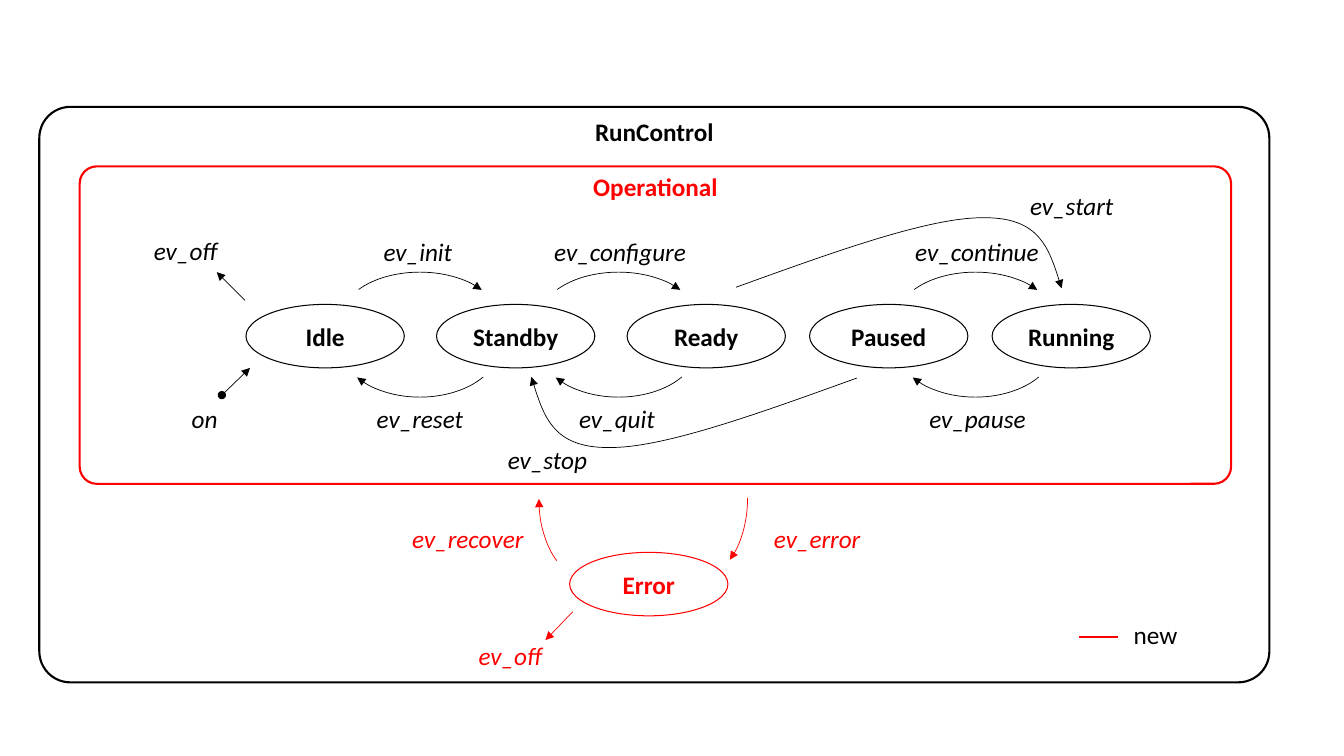
from lxml import etree
from pptx import Presentation
from pptx.dml.color import RGBColor
from pptx.enum import shapes, text
from pptx.oxml.ns import qn
from pptx.util import Inches, Pt

BLACK = RGBColor(0x00, 0x00, 0x00)
RED = RGBColor(0xFF, 0x00, 0x00)
FONT = "Calibri"

STATE_WIDTH, STATE_HEIGHT = 1.57, 0.63
STATE_TOP = 3.02
STATES = [("Idle", 2.44), ("Standby", 4.33), ("Ready", 6.22), ("Paused", 8.03), ("Running", 9.84)]

# Arc left, forward event with its left and width, backward event with the same
TRANSITION_PAIRS = [
    (3.38, ("ev_init", 3.7, 0.89), ("ev_reset", 3.63, 1.07)),
    (5.35, ("ev_configure", 5.39, 1.52), ("ev_quit", 5.64, 0.96)),
    (8.89, ("ev_continue", 8.97, 1.44), ("ev_pause", 9.11, 1.17)),
]
LABELS = [
    ("ev_start", 10.11, 1.84, 1.04, BLACK),
    ("ev_stop", 4.93, 4.36, 1.0, BLACK),
    ("on", 1.8, 3.95, 0.46, BLACK),
    ("ev_off", 1.42, 2.29, 0.84, BLACK),
    ("ev_recover", 3.98, 5.14, 1.32, RED),
    ("ev_error", 7.57, 5.14, 1.07, RED),
    ("ev_off", 4.64, 6.3, 0.84, RED),
]
ARC_START, ARC_END, QUARTER_END = 15.36, 92.32, 54.02

START_CURVE = [(7.3, 2.85), (8.27, 2.5), (9.23, 2.15), (9.77, 2.16),
               (10.31, 2.16), (10.42, 2.51), (10.53, 2.86)]
# The stop curve is the start curve turned by half a circle
STOP_CURVE = [(15.8 - x, 6.6 - y) for x, y in START_CURVE]


def box(left, top, width, height):
    return Inches(left), Inches(top), Inches(width), Inches(height)


def style_line(item, color, width, head=None, tail=None):
    item.line.color.rgb = color
    item.line.width = Pt(width)
    ln = item.line._get_or_add_ln()
    for tag, end in (("a:headEnd", head), ("a:tailEnd", tail)):
        if end:
            etree.SubElement(ln, qn(tag), type=end)


def style_outline(shape, color, width, **ends):
    shape.shadow.inherit = False
    shape.fill.background()
    style_line(shape, color, width, **ends)


def write(frame, words, color, align=text.PP_ALIGN.CENTER, bold=False, italic=False):
    frame.text = words
    paragraph = frame.paragraphs[0]
    paragraph.alignment = align
    font = paragraph.font
    font.name, font.size = FONT, Pt(18)
    font.bold, font.italic = bold, italic
    font.color.rgb = color


def add_frame(slide, title, place, color):
    frame = slide.shapes.add_shape(shapes.MSO_SHAPE.ROUNDED_RECTANGLE, *box(*place))
    frame.adjustments[0] = 0.054
    style_outline(frame, color, 1.5)
    heading = frame.text_frame
    heading.vertical_anchor = text.MSO_ANCHOR.TOP
    heading.margin_top = heading.margin_bottom = 0
    write(heading, title, color, bold=True)


def add_state(slide, name, left, top, color=BLACK):
    state = slide.shapes.add_shape(shapes.MSO_SHAPE.OVAL, *box(left, top, STATE_WIDTH, STATE_HEIGHT))
    style_outline(state, color, 0.75)
    caption = state.text_frame
    caption.vertical_anchor = text.MSO_ANCHOR.MIDDLE
    caption.margin_left = caption.margin_right = 0
    write(caption, name, color, bold=True)


def add_label(slide, words, left, top, width, color=BLACK, italic=True):
    label = slide.shapes.add_textbox(*box(left, top, width, 0.4))
    label.text_frame.word_wrap = False
    write(label.text_frame, words, color, italic=italic)


def add_arc(slide, left, top, height, end, color=BLACK, flipped=False, rotation=0):
    """Add an arc arrow; a flipped arc is pointed at its start."""
    arc = slide.shapes.add_shape(shapes.MSO_SHAPE.ARC, *box(left, top, STATE_WIDTH, height))
    arc.adjustments[0], arc.adjustments[1] = ARC_START, end
    arc.rotation = rotation
    if flipped:
        arc._element.spPr.xfrm.set("flipV", "1")
    style_outline(arc, color, 0.5, **{"head" if flipped else "tail": "triangle"})


def add_curve(slide, points):
    """Add an arrow of cubic Bezier pieces: a start, then three points for each piece."""
    start, *rest = [(Inches(x), Inches(y)) for x, y in points]
    builder = slide.shapes.build_freeform(*start)
    builder.add_line_segments(rest, close=False)
    curve = builder.convert_to_shape()
    segments = list(curve._element.iter(qn("a:lnTo")))
    for i in range(0, len(segments), 3):
        bezier = etree.Element(qn("a:cubicBezTo"))
        segments[i].addprevious(bezier)
        for segment in segments[i:i + 3]:
            bezier.append(segment[0])
            segment.getparent().remove(segment)
    style_outline(curve, BLACK, 0.5, tail="triangle")


def add_straight(slide, begin, end, color, width=0.5, **ends):
    line = slide.shapes.add_connector(
        shapes.MSO_CONNECTOR.STRAIGHT, *(Inches(v) for v in begin + end))
    style_line(line, color, width, **ends)
    etree.SubElement(line._element.spPr, qn("a:effectLst"))


def main():
    prs = Presentation()
    prs.slide_width, prs.slide_height = Inches(13.33), Inches(7.5)
    slide = prs.slides.add_slide(prs.slide_layouts[6])

    add_frame(slide, "RunControl", (0.39, 1.06, 12.2, 5.71), BLACK)
    add_frame(slide, "Operational", (0.79, 1.65, 11.42, 3.15), RED)

    for name, left in STATES:
        add_state(slide, name, left, STATE_TOP)
    add_state(slide, "Error", 5.65, 5.48, RED)

    for arc_left, (forward, f_left, f_width), (backward, b_left, b_width) in TRANSITION_PAIRS:
        add_arc(slide, arc_left, 2.7, 0.94, ARC_END, flipped=True)
        add_label(slide, forward, f_left, 2.3, f_width)
        add_arc(slide, arc_left, 2.94, 1.0, ARC_END)
        add_label(slide, backward, b_left, 3.95, b_width)

    add_curve(slide, START_CURVE)
    add_curve(slide, STOP_CURVE)
    add_arc(slide, 6.16, 4.47, 0.94, QUARTER_END, RED, flipped=True, rotation=90)
    add_arc(slide, 5.03, 4.48, 0.94, QUARTER_END, RED, rotation=90)

    add_straight(slide, (2.2, 3.92), (2.48, 3.65), BLACK, head="oval", tail="triangle")
    add_straight(slide, (2.43, 2.98), (2.15, 2.7), BLACK, tail="triangle")
    add_straight(slide, (5.68, 6.07), (5.41, 6.35), RED, tail="triangle")

    for label in LABELS:
        add_label(slide, *label)

    add_straight(slide, (10.7, 6.32), (11.09, 6.32), RED, width=1.5)
    add_label(slide, "new", 11.14, 6.09, 0.64, italic=False)

    prs.save("out.pptx")


if __name__ == "__main__":
    main()
